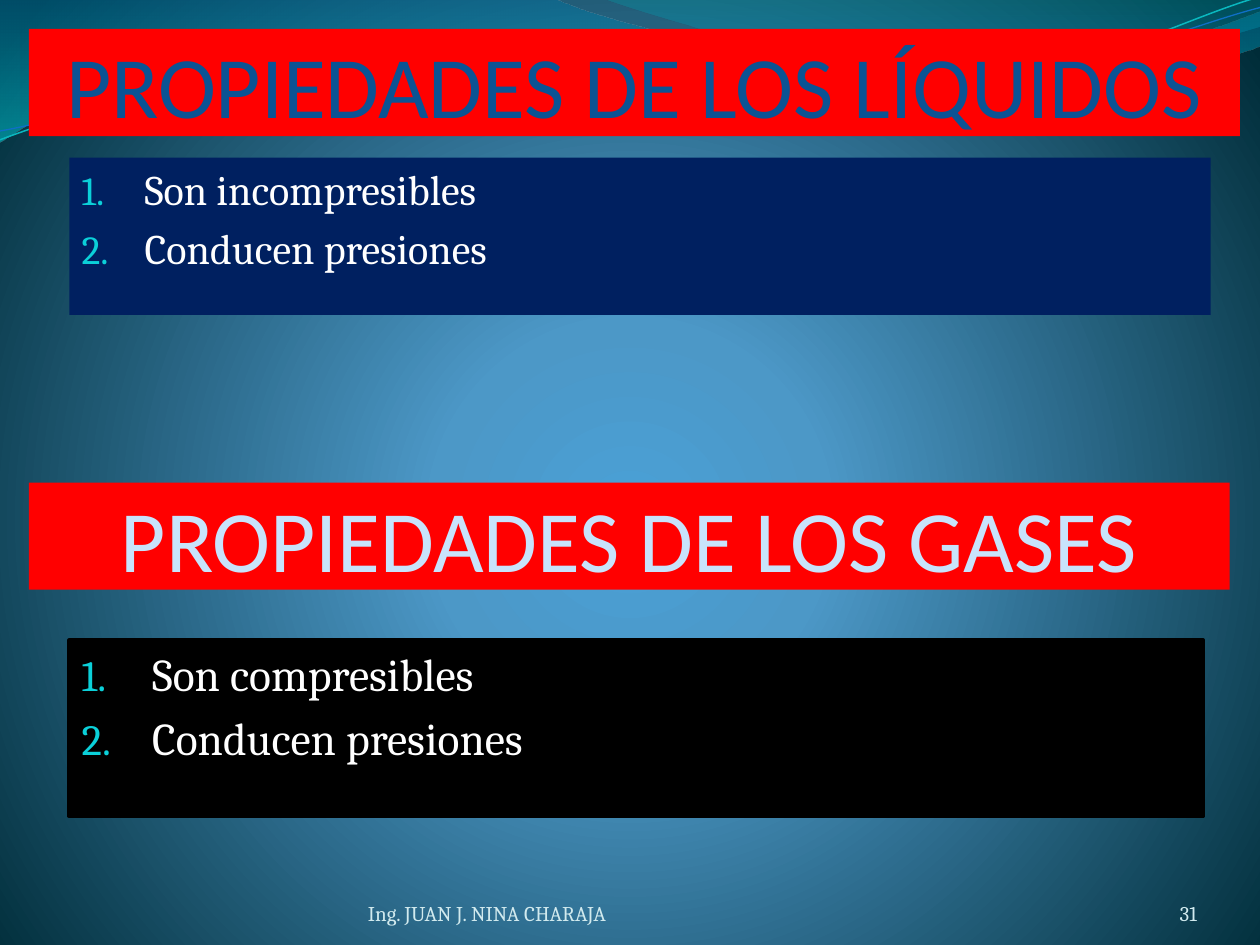
from lxml import etree
from pptx import Presentation
from pptx.dml.color import RGBColor
from pptx.enum import shapes, text
from pptx.oxml import ns
from pptx.util import Inches, Pt

RED = RGBColor(0xFF, 0x00, 0x00)
NAVY = RGBColor(0x00, 0x20, 0x60)
BLACK = RGBColor(0x00, 0x00, 0x00)
WHITE = RGBColor(0xFF, 0xFF, 0xFF)
BLUE = RGBColor(0x0B, 0x53, 0x94)
PALE_BLUE = RGBColor(0xC8, 0xE3, 0xFB)
PALE_TEAL = RGBColor(0xD1, 0xEA, 0xEE)
NUMBER_TEAL = RGBColor(0x0B, 0xD0, 0xD9)
WAVE_TEAL = RGBColor(0x0A, 0xB8, 0xBF)
WAVE_BLUE = RGBColor(0x0F, 0x6F, 0xC6)
DEEP_BLUE = RGBColor(0x00, 0x74, 0xA1)
TURQUOISE = RGBColor(0x00, 0xC6, 0xCF)
DARK_TURQUOISE = RGBColor(0x00, 0xA1, 0xA9)
MID_BLUE = RGBColor(0x00, 0x8B, 0xBF)
GLOW = (
    (0, RGBColor(0x4A, 0xA0, 0xD6), 100),
    (25, RGBColor(0x4C, 0x98, 0xC7), 100),
    (100, RGBColor(0x00, 0x2C, 0x38), 100),
)

WIDE_WAVE = [
    (0, -0.01), (4.4, -0.01),
    (4.76, 0.17, 6.64, 0.63, 7.58, 0.63), (8.53, 0.63, 9.58, 0.26, 10, 0.09),
    (10.01, 0.36),
    (9.83, 0.44, 8.7, 0.76, 7.46, 0.75), (6.22, 0.75, 3.82, 0.28, 2.57, 0.34),
    (1.29, 0.35, 0.46, 0.83, -0.01, 1.13),
]
RIGHT_WAVE = [
    (4.79, -0.01),
    (5.09, 0.11, 6.82, 0.62, 7.69, 0.65), (8.56, 0.69, 9.61, 0.32, 10, 0.21),
    (10, 0),
]
TEAL_LINE = [
    (0, 1.11),
    (0.48, 0.93, 1.58, 0.57, 2.77, 0.52), (3.95, 0.47, 5.93, 0.89, 7.13, 0.8),
    (8.33, 0.71, 9.38, 0.15, 9.98, -0.02),
]
BLUE_LINE = [
    (0, 1.04),
    (0.47, 0.96, 1.64, 0.61, 2.83, 0.56), (4.03, 0.51, 5.97, 0.83, 7.17, 0.75),
    (8.36, 0.67, 9.41, 0.21, 10, 0.06),
]


def add_element(parent, tag, **attributes):
    """Append a DrawingML child and return it."""
    element = etree.SubElement(parent, ns.qn(tag))
    for name, value in attributes.items():
        element.set(name, str(value))
    return element


def set_gradient(properties, stops, circle=None):
    """Replace a solid fill by a downward or circular gradient."""
    gradient = etree.Element(ns.qn("a:gradFill"), rotWithShape="1")
    stop_list = add_element(gradient, "a:gsLst")
    for position, color, opacity in stops:
        stop = add_element(stop_list, "a:gs", pos=position * 1000)
        tint = add_element(stop, "a:srgbClr", val=color)
        if opacity < 100:
            add_element(tint, "a:alpha", val=opacity * 1000)
    if circle:
        shade = add_element(gradient, "a:path", path="circle")
        sides = {side: share * 1000 for side, share in zip("ltrb", circle)}
        add_element(shade, "a:fillToRect", **sides)
    else:
        add_element(gradient, "a:lin", ang=5400000, scaled=1)
    properties.replace(properties.find(ns.qn("a:solidFill")), gradient)


def add_curve(slide, outline, close):
    """Add a freeform of lines and cubic curves."""
    points = [
        (Inches(x), Inches(y))
        for segment in outline
        for x, y in zip(segment[::2], segment[1::2])
    ]
    builder = slide.shapes.build_freeform(*points[0])
    builder.add_line_segments(points[1:], close=close)
    shape = builder.convert_to_shape()
    shape.shadow.inherit = False
    lines = iter(shape.element.findall(".//" + ns.qn("a:lnTo")))
    for segment in outline[1:]:
        line = next(lines)
        if len(segment) == 6:
            curve = etree.Element(ns.qn("a:cubicBezTo"))
            line.addprevious(curve)
            for corner in (line, next(lines), next(lines)):
                curve.append(corner[0])
                corner.getparent().remove(corner)
    return shape


def add_wave(slide, outline, stops):
    """Add a translucent wave band."""
    shape = add_curve(slide, outline, True)
    shape.line.fill.background()
    shape.fill.solid()
    set_gradient(shape.element.spPr, stops)


def add_wave_line(slide, outline, color, width):
    """Add a thin wavy line."""
    shape = add_curve(slide, outline, False)
    shape.fill.background()
    shape.line.color.rgb = color
    shape.line.width = Pt(width)


def set_font(paragraph, name, size, color):
    """Format all the text of a paragraph."""
    paragraph.font.name = name
    paragraph.font.size = Pt(size)
    paragraph.font.color.rgb = color


def add_rectangle(slide, left, top, width, height):
    """Add a rectangle without line or shadow."""
    shape = slide.shapes.add_shape(
        shapes.MSO_SHAPE.RECTANGLE, Inches(left), Inches(top), Inches(width), Inches(height)
    )
    shape.shadow.inherit = False
    shape.line.fill.background()
    return shape


def format_heading(shape, wording, color):
    """Format a red heading bar."""
    shape.fill.solid()
    shape.fill.fore_color.rgb = RED
    frame = shape.text_frame
    frame.text = wording
    frame.word_wrap = True
    frame.auto_size = text.MSO_AUTO_SIZE.NONE
    frame.vertical_anchor = text.MSO_ANCHOR.BOTTOM
    frame.margin_left = frame.margin_right = frame.margin_bottom = 0
    frame.margin_top = Inches(0.05)
    paragraph = frame.paragraphs[0]
    paragraph.alignment = text.PP_ALIGN.CENTER
    set_font(paragraph, "Calibri", 50, color)


def add_numbered_list(slide, box, fill, items, size, indent):
    """Add a filled box with a numbered list."""
    shape = add_rectangle(slide, *box)
    shape.fill.solid()
    shape.fill.fore_color.rgb = fill
    frame = shape.text_frame
    frame.text = "\n".join(items)
    frame.vertical_anchor = text.MSO_ANCHOR.TOP
    for paragraph in frame.paragraphs:
        paragraph.alignment = text.PP_ALIGN.LEFT
        properties = paragraph._p.get_or_add_pPr()
        properties.set("marL", str(Inches(indent)))
        properties.set("indent", str(-Inches(indent)))
        add_element(add_element(properties, "a:spcBef"), "a:spcPct", val=20000)
        add_element(add_element(properties, "a:buClr"), "a:srgbClr", val=NUMBER_TEAL)
        add_element(properties, "a:buSzPct", val=95000)
        add_element(properties, "a:buFont", typeface="+mj-lt")
        add_element(properties, "a:buAutoNum", type="arabicPeriod")
        set_font(paragraph, "Cambria", size, WHITE)
    return shape


def add_footer(slide, left, width, wording, alignment):
    """Add a small text at the foot of the slide."""
    box = slide.shapes.add_textbox(Inches(left), Inches(6.95), Inches(width), Inches(0.4))
    frame = box.text_frame
    frame.text = wording
    frame.word_wrap = True
    frame.vertical_anchor = text.MSO_ANCHOR.BOTTOM
    frame.margin_left = frame.margin_right = frame.margin_top = frame.margin_bottom = 0
    frame.paragraphs[0].alignment = alignment
    set_font(frame.paragraphs[0], "Cambria", 12, PALE_TEAL)


def main():
    """Build the slide and save it."""
    presentation = Presentation()
    presentation.slide_width, presentation.slide_height = Inches(10), Inches(7.5)
    slide = presentation.slides.add_slide(presentation.slide_layouts[5])
    slide.background.fill.solid()
    set_gradient(slide.element.find(".//" + ns.qn("p:bgPr")), GLOW, (10, 110, 10, 100))

    add_wave(slide, WIDE_WAVE, ((0, DEEP_BLUE, 45), (100, TURQUOISE, 55)))
    add_wave(slide, RIGHT_WAVE, ((0, DARK_TURQUOISE, 30), (80, MID_BLUE, 45)))
    add_wave_line(slide, TEAL_LINE, WAVE_TEAL, 0.85)
    add_wave_line(slide, BLUE_LINE, WAVE_BLUE, 0.75)

    title = slide.shapes.title
    title.left, title.top = Inches(0.23), Inches(0.23)
    title.width, title.height = Inches(9.61), Inches(0.85)
    slide.shapes.element.append(title.element)
    format_heading(title, "PROPIEDADES DE LOS LÍQUIDOS", BLUE)
    add_numbered_list(slide, (0.55, 1.25, 9.06, 1.25), NAVY,
                      ("Son incompresibles", "Conducen presiones"), 24, 0.5)

    add_footer(slide, 2.92, 3.67, "Ing. JUAN J. NINA CHARAJA", text.PP_ALIGN.LEFT)
    add_footer(slide, 8.67, 0.83, "31", text.PP_ALIGN.RIGHT)

    gas_heading = add_rectangle(slide, 0.23, 3.83, 9.53, 0.85)
    format_heading(gas_heading, "PROPIEDADES DE LOS GASES", PALE_BLUE)
    gas_list = add_numbered_list(slide, (0.55, 5.08, 9, 1.4), BLACK,
                                 ("Son compresibles", "Conducen presiones"), 26, 0.56)
    gas_list.line.color.rgb = BLACK
    gas_list.line.width = Pt(2)
    presentation.save("out.pptx")


if __name__ == "__main__":
    main()
